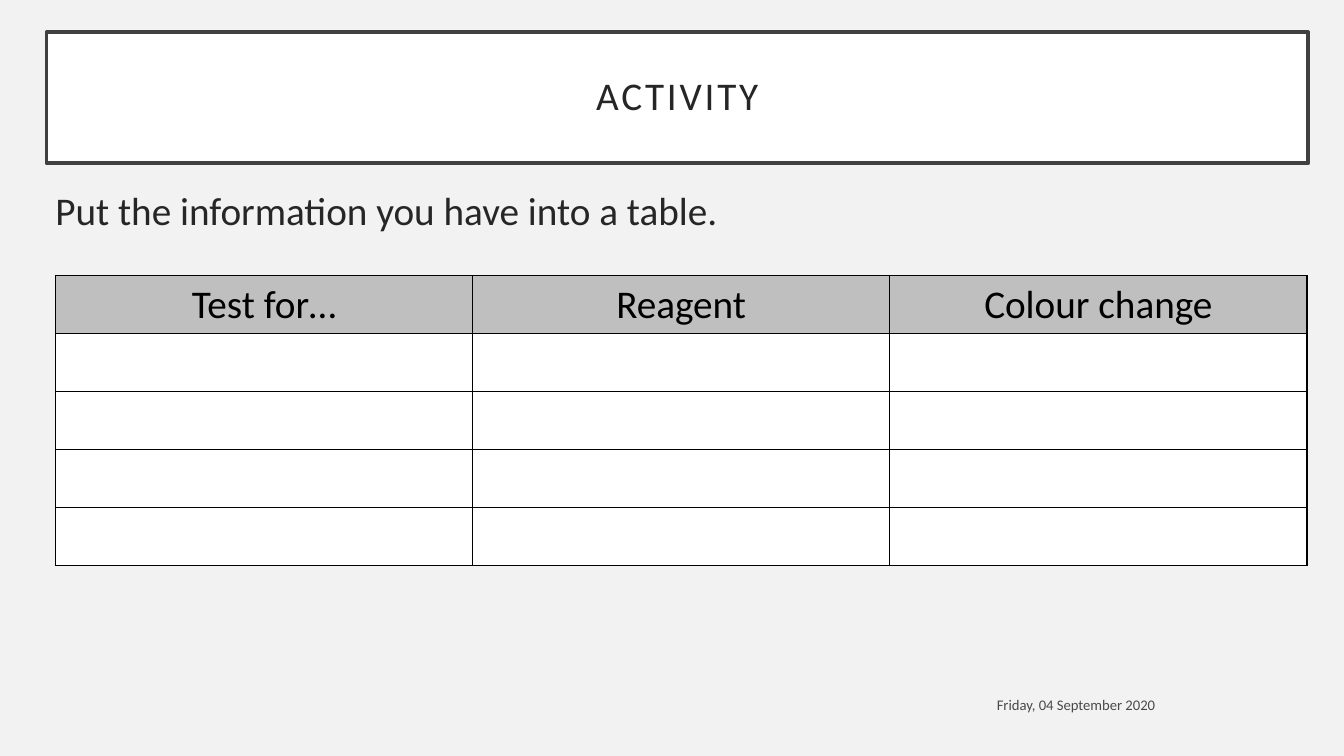
import pptx
import pptx.dml.color
import pptx.enum.text
import pptx.oxml.ns
import pptx.util
from lxml import etree

Pt = pptx.util.Pt
ALIGN = pptx.enum.text.PP_ALIGN
ANCHOR = pptx.enum.text.MSO_ANCHOR
qn = pptx.oxml.ns.qn

FONT = "Calibri"
HEADERS = ["Test for…", "Reagent", "Colour change"]
ROW_COUNT = 5
COLUMN_WIDTH = 298
ROW_HEIGHT = 41.4


def colour(hex_string):
    return pptx.dml.color.RGBColor.from_string(hex_string)


def paint(fill, hex_string):
    fill.solid()
    fill.fore_color.rgb = colour(hex_string)


def place(shape, left, top, width, height):
    shape.left, shape.top = Pt(left), Pt(top)
    shape.width, shape.height = Pt(width), Pt(height)


def write(text_frame, text, size, hex_string, alignment):
    text_frame.text = text
    paragraph = text_frame.paragraphs[0]
    paragraph.alignment = alignment
    font = paragraph.runs[0].font
    font.name, font.size = FONT, Pt(size)
    font.color.rgb = colour(hex_string)
    return paragraph


def fit_frame(text_frame, anchor):
    text_frame.word_wrap = True
    text_frame.auto_size = pptx.enum.text.MSO_AUTO_SIZE.NONE
    text_frame.vertical_anchor = anchor


def add_title(slide, text):
    title = slide.shapes.title
    place(title, 33.1, 23, 901.4, 93.6)
    paint(title.fill, "FFFFFF")
    title.line.color.rgb = colour("404040")
    title.line.width = Pt(2.5)
    frame = title.text_frame
    fit_frame(frame, ANCHOR.MIDDLE)
    frame.margin_left = frame.margin_right = Pt(14.4)
    frame.margin_top = frame.margin_bottom = Pt(14.4)
    paragraph = write(frame, text, 28, "262626", ALIGN.CENTER)
    paragraph.line_spacing = 0.9
    # Letter spacing of 2 points
    paragraph.runs[0].font._element.set("spc", "200")


def add_instruction(slide, text):
    body = slide.placeholders[1]
    place(body, 32.4, 129.6, 902.2, 48.2)
    fit_frame(body.text_frame, ANCHOR.TOP)
    paragraph = write(body.text_frame, text, 28, "262626", ALIGN.LEFT)
    paragraph.space_before = Pt(10)
    # No bullet and no hanging indent
    properties = paragraph._p.get_or_add_pPr()
    properties.set("marL", "0")
    properties.set("indent", "0")
    etree.SubElement(properties, qn("a:buNone"))


def add_date(slide, text):
    box = slide.shapes.add_textbox(Pt(615.6), Pt(491), Pt(216.7), Pt(25.2))
    fit_frame(box.text_frame, ANCHOR.MIDDLE)
    write(box.text_frame, text, 10.5, "494949", ALIGN.RIGHT)


def add_borders(cell, hex_string, width):
    properties = cell._tc.get_or_add_tcPr()
    for side in ("a:lnL", "a:lnR", "a:lnT", "a:lnB"):
        line = etree.SubElement(properties, qn(side), w=str(Pt(width)))
        fill = etree.SubElement(line, qn("a:solidFill"))
        etree.SubElement(fill, qn("a:srgbClr"), val=hex_string)


def add_results_table(slide):
    table = slide.shapes.add_table(
        ROW_COUNT, len(HEADERS), Pt(39.6), Pt(197),
        Pt(COLUMN_WIDTH * len(HEADERS)), Pt(ROW_HEIGHT * ROW_COUNT)).table
    for column in table.columns:
        column.width = Pt(COLUMN_WIDTH)
    for row in table.rows:
        row.height = Pt(ROW_HEIGHT)
    for cell in table.iter_cells():
        add_borders(cell, "000000", 1)
        paint(cell.fill, "FFFFFF")
    for cell, header in zip(table.rows[0].cells, HEADERS):
        paint(cell.fill, "BFBFBF")
        write(cell.text_frame, header, 28, "000000", ALIGN.CENTER)


def main():
    presentation = pptx.Presentation()
    presentation.slide_width, presentation.slide_height = Pt(960), Pt(540)
    slide = presentation.slides.add_slide(presentation.slide_layouts[1])
    paint(slide.background.fill, "F2F2F2")

    add_title(slide, "ACTIVITY")
    add_instruction(slide, "Put the information you have into a table.")
    add_date(slide, "Friday, 04 September 2020")
    add_results_table(slide)

    presentation.save("out.pptx")


if __name__ == "__main__":
    main()
